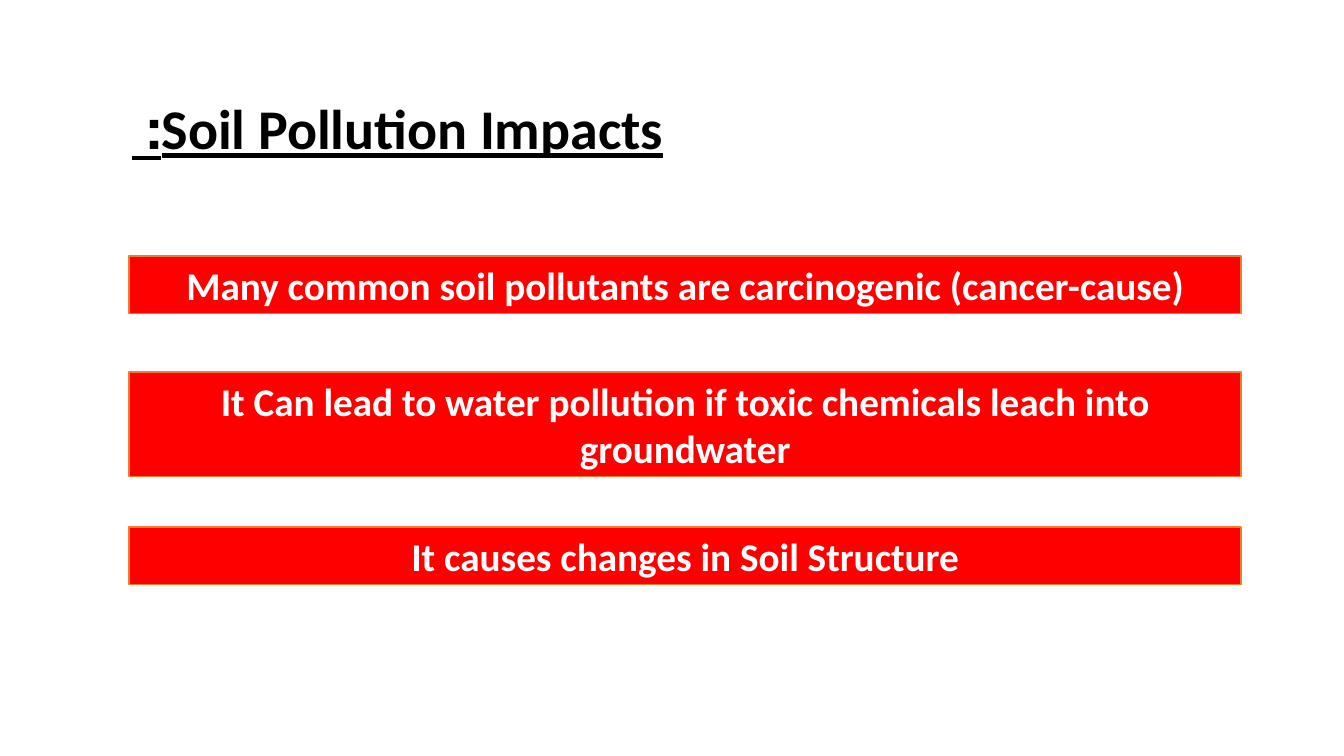
import pptx
import pptx.dml.color
import pptx.enum.shapes
import pptx.enum.text
import pptx.util

Inches = pptx.util.Inches
Pt = pptx.util.Pt
RGBColor = pptx.dml.color.RGBColor
Align = pptx.enum.text.PP_ALIGN
Anchor = pptx.enum.text.MSO_ANCHOR
AutoSize = pptx.enum.text.MSO_AUTO_SIZE

BLACK = RGBColor(0x00, 0x00, 0x00)
WHITE = RGBColor(0xFF, 0xFF, 0xFF)
RED = RGBColor(0xFF, 0x00, 0x00)
ORANGE = RGBColor(0xED, 0x7D, 0x31)

TITLE = "Soil Pollution Impacts: "
IMPACTS = [
    ("Many common soil pollutants are carcinogenic (cancer-cause)", 2.54, 0.57, False),
    ("It Can lead to water pollution if toxic chemicals leach into groundwater", 3.69, 1.04, True),
    ("It causes changes in Soil Structure", 5.23, 0.57, False),
]


class ImpactSlide:
    font_name = "Calibri"

    def __init__(self, deck):
        self.page = deck.slides.add_slide(deck.slide_layouts[5])

    def set_text(self, frame, text, size, color, align, right_to_left):
        frame.word_wrap = True
        frame.vertical_anchor = Anchor.MIDDLE
        para = frame.paragraphs[0]
        para.text = text
        para.alignment = align
        para.font.name = self.font_name
        para.font.size = Pt(size)
        para.font.bold = True
        para.font.color.rgb = color
        if right_to_left:
            para._p.get_or_add_pPr().set("rtl", "1")
        return para

    def title(self, text):
        box = self.page.shapes.title
        box.left, box.top = Inches(1.21), Inches(0.58)
        box.width, box.height = Inches(11.5), Inches(1.45)
        para = self.set_text(box.text_frame, text, 40, BLACK, Align.LEFT, True)
        para.font.underline = True
        para.line_spacing = 0.9
        box.text_frame.auto_size = AutoSize.NONE

    def banner(self, text, top, height, right_to_left):
        box = self.page.shapes.add_shape(
            pptx.enum.shapes.MSO_SHAPE.RECTANGLE,
            Inches(1.28), Inches(top), Inches(11.03), Inches(height))
        box.shadow.inherit = False
        box.fill.solid()
        box.fill.fore_color.rgb = RED
        box.line.color.rgb = ORANGE
        box.line.width = Pt(1)
        self.set_text(box.text_frame, text, 28, WHITE, Align.CENTER, right_to_left)
        box.text_frame.auto_size = AutoSize.SHAPE_TO_FIT_TEXT


def main():
    deck = pptx.Presentation()
    deck.slide_width = Inches(13.33)
    deck.slide_height = Inches(7.5)
    slide = ImpactSlide(deck)
    slide.title(TITLE)
    for impact in IMPACTS:
        slide.banner(*impact)
    deck.save("out.pptx")


if __name__ == "__main__":
    main()
